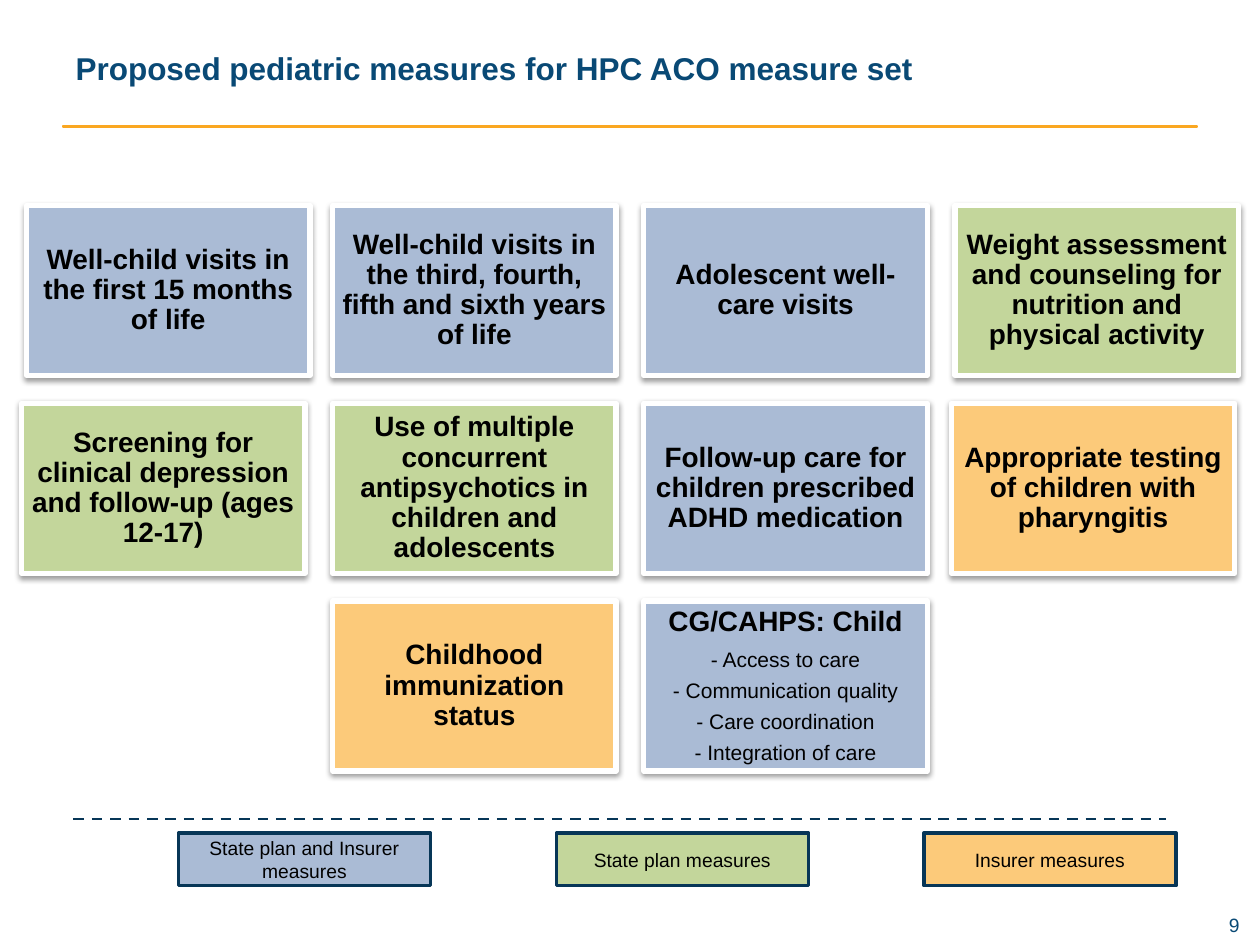
from lxml.etree import SubElement
from pptx import Presentation
from pptx.dml.color import RGBColor
from pptx.enum.dml import MSO_LINE
from pptx.enum.shapes import MSO_CONNECTOR, MSO_SHAPE
from pptx.enum.text import MSO_ANCHOR, PP_ALIGN
from pptx.oxml.ns import qn
from pptx.util import Pt

COLORS = {
    "both": "AABBD5",
    "medicaid": "C3D69B",
    "insurer": "FCCA7A",
    "title": "094975",
    "rule": "FAA721",
    "outline": "073657",
    "text": "000000",
    "white": "FFFFFF",
}

CARD_WIDTH, CARD_HEIGHT = 162, 97.2
GRID_LEFT, GRID_TOP = 12.24, 117.36
COLUMN_PITCH, ROW_PITCH = 177.84, 113.04

MEASURES = [
    (0, 0, "both", ["Well-child visits in the first 15 months of life"]),
    (0, 1, "both", ["Well-child visits in the third, fourth, fifth and sixth years of life"]),
    (0, 2, "both", ["Adolescent well-care visits"]),
    (0, 3, "medicaid", ["Weight assessment and counseling for nutrition and physical activity"]),
    (1, 0, "medicaid", ["Screening for clinical depression and follow-up (ages 12-17)"]),
    (1, 1, "medicaid", ["Use of multiple concurrent antipsychotics in children and adolescents"]),
    (1, 2, "both", ["Follow-up care for children prescribed ADHD medication"]),
    (1, 3, "insurer", ["Appropriate testing of children with pharyngitis"]),
    (2, 1, "insurer", ["Childhood immunization status"]),
    (2, 2, "both", ["CG/CAHPS: Child", "- Access to care", "- Communication quality",
                    "- Care coordination", "- Integration of care"]),
]
NUDGES = {(0, 0): 2.88, (1, 3): -2.16}

LEGEND = [
    (102, "both", "State plan and Insurer measures"),
    (318, "medicaid", "State plan measures"),
    (528, "insurer", "Insurer measures"),
]


def rgb(name):
    return RGBColor.from_string(COLORS[name])


def style_text(paragraph, size, color, align, bold=False):
    paragraph.alignment = align
    font = paragraph.font
    font.name = "Arial"
    font.size = Pt(size)
    font.bold = bold
    font.color.rgb = rgb(color)


def set_margins(frame, horizontal, vertical):
    frame.margin_left = frame.margin_right = Pt(horizontal)
    frame.margin_top = frame.margin_bottom = Pt(vertical)


def add_box(slide, left, top, width, height, fill, outline, weight):
    box = slide.shapes.add_shape(MSO_SHAPE.RECTANGLE, Pt(left), Pt(top), Pt(width), Pt(height))
    box.shadow.inherit = False
    box.fill.solid()
    box.fill.fore_color.rgb = rgb(fill)
    box.line.color.rgb = rgb(outline)
    box.line.width = Pt(weight)
    box.text_frame.word_wrap = True
    box.text_frame.vertical_anchor = MSO_ANCHOR.MIDDLE
    return box


def add_drop_shadow(box):
    effects = box._element.spPr.find(qn("a:effectLst"))
    shadow = SubElement(effects, qn("a:outerShdw"), blurRad=str(Pt(3.1)), dist=str(Pt(1.6)),
                        dir="5400000", rotWithShape="0")
    color = SubElement(shadow, qn("a:srgbClr"), val=COLORS["text"])
    SubElement(color, qn("a:alpha"), val="38000")


def add_measure(slide, row, column, payer, lines):
    left = GRID_LEFT + column * COLUMN_PITCH + NUDGES.get((row, column), 0)
    top = GRID_TOP + row * ROW_PITCH
    card = add_box(slide, left, top, CARD_WIDTH, CARD_HEIGHT, payer, "white", 3)
    add_drop_shadow(card)
    frame = card.text_frame
    set_margins(frame, 5, 5)
    for index, line in enumerate(lines):
        paragraph = frame.add_paragraph() if index else frame.paragraphs[0]
        paragraph.text = line
        size = 12 if index else 16
        style_text(paragraph, size, "text", PP_ALIGN.CENTER, bold=index == 0)
        paragraph.line_spacing = 0.9
        if index < len(lines) - 1:
            paragraph.space_after = Pt(size * 0.4)


def add_legend_key(slide, left, payer, label):
    key = add_box(slide, left, 475.92, 144, 30.24, payer, "outline", 2)
    key.text_frame.text = label
    style_text(key.text_frame.paragraphs[0], 11, "text", PP_ALIGN.CENTER)


def add_divider(slide):
    divider = slide.shapes.add_connector(MSO_CONNECTOR.STRAIGHT, Pt(42), Pt(468), Pt(666), Pt(468))
    divider.line.color.rgb = rgb("outline")
    divider.line.width = Pt(1.5)
    divider.line.dash_style = MSO_LINE.DASH
    SubElement(divider._element.spPr, qn("a:effectLst"))


def set_title(slide, wording):
    title = slide.shapes.title
    title.left, title.top, title.width, title.height = Pt(36), Pt(12), Pt(648), Pt(54)
    title.text_frame.text = wording
    title.text_frame.vertical_anchor = MSO_ANCHOR.MIDDLE
    set_margins(title.text_frame, 7.2, 3.6)
    style_text(title.text_frame.paragraphs[0], 18, "title", PP_ALIGN.LEFT, bold=True)


def add_page_number(slide, number):
    frame = slide.shapes.add_textbox(Pt(534), Pt(522), Pt(174.4), Pt(13.7)).text_frame
    frame.word_wrap = True
    set_margins(frame, 0, 0)
    frame.text = number
    style_text(frame.paragraphs[0], 11, "title", PP_ALIGN.RIGHT)


def main():
    deck = Presentation()
    deck.slide_width, deck.slide_height = Pt(720), Pt(540)
    slide = deck.slides.add_slide(deck.slide_layouts[5])
    add_box(slide, 36, 72, 648, 0.72, "rule", "rule", 1)
    add_page_number(slide, "9")
    set_title(slide, "Proposed pediatric measures for HPC ACO measure set")
    for measure in MEASURES:
        add_measure(slide, *measure)
    add_divider(slide)
    for key in LEGEND:
        add_legend_key(slide, *key)
    deck.save("out.pptx")


if __name__ == "__main__":
    main()
